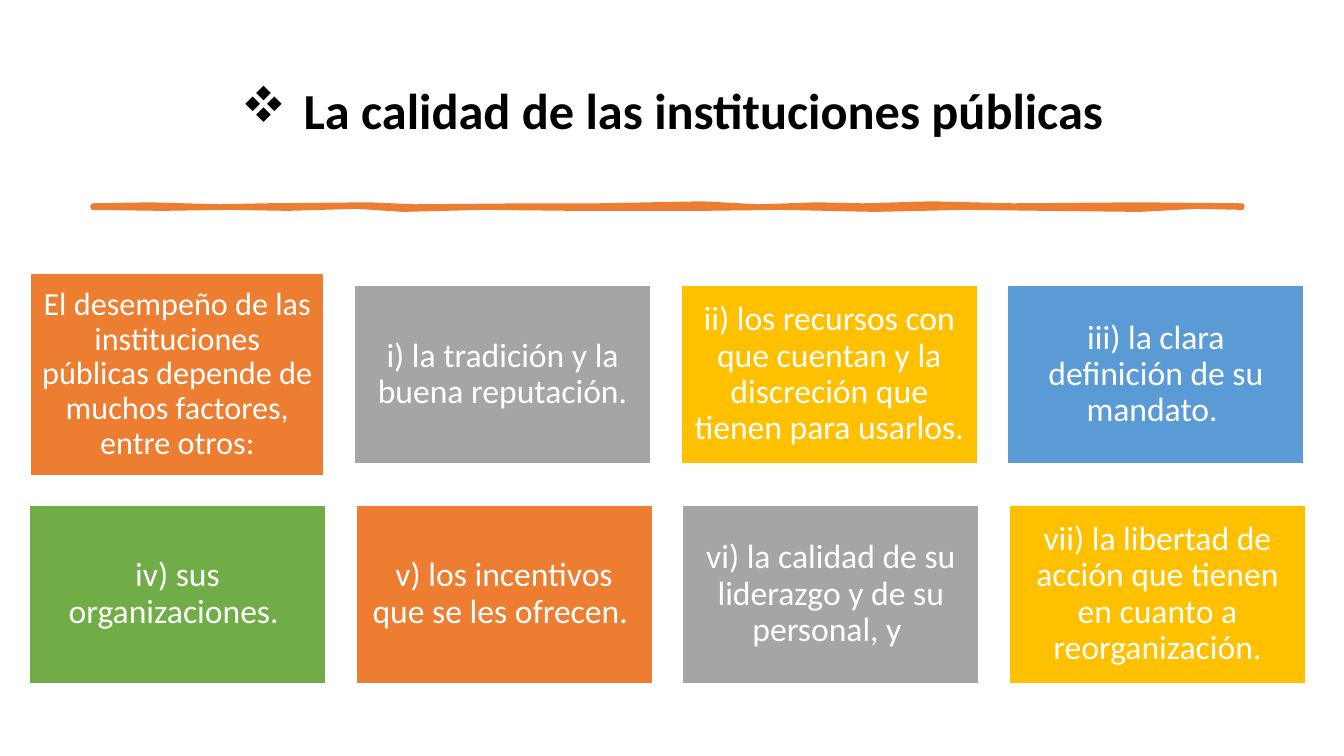
from lxml.etree import SubElement
from pptx import Presentation
from pptx.dml.color import RGBColor
from pptx.enum.shapes import MSO_SHAPE
from pptx.enum.text import MSO_ANCHOR, MSO_AUTO_SIZE, PP_ALIGN
from pptx.oxml.ns import qn
from pptx.util import Inches, Pt

FONT = "Calibri"
BLACK = RGBColor(0x00, 0x00, 0x00)
WHITE = RGBColor(0xFF, 0xFF, 0xFF)
ORANGE = RGBColor(0xED, 0x7D, 0x31)
GRAY = RGBColor(0xA5, 0xA5, 0xA5)
GOLD = RGBColor(0xFF, 0xC0, 0x00)
BLUE = RGBColor(0x5B, 0x9B, 0xD5)
GREEN = RGBColor(0x70, 0xAD, 0x47)

# Card: text, fill, width, height, font size
CARD = (2.94, 1.77, 24)
FIRST_ROW = [
    ("El desempeño de las instituciones públicas depende de muchos factores, entre otros:",
     ORANGE, 2.91, 2.01, 23),
    ("i) la tradición y la buena reputación.", GRAY, *CARD),
    ("ii) los recursos con que cuentan y la discreción que tienen para usarlos.", GOLD, *CARD),
    ("iii) la clara definición de su mandato. ", BLUE, *CARD),
]
SECOND_ROW = [
    ("iv) sus organizaciones. ", GREEN, *CARD),
    ("v) los incentivos que se les ofrecen. ", ORANGE, *CARD),
    ("vi) la calidad de su liderazgo y de su personal, y ", GRAY, *CARD),
    ("vii) la libertad de acción que tienen en cuanto a reorganización.", GOLD, *CARD),
]
GAP = 0.3

# Uneven edges of the rule: (share of its width, offset in inches)
TOP_EDGE = [(0, 0), (0.05, -0.01), (0.11, 0.01), (0.15, 0), (0.24, -0.01), (0.28, 0.01),
            (0.38, 0), (0.44, 0), (0.53, -0.02), (0.58, 0.01), (0.63, -0.01),
            (0.67, 0), (0.73, -0.02), (0.8, 0), (0.91, -0.01), (1, 0)]
BOTTOM_EDGE = [(0, 0.02), (0.06, 0.03), (0.12, 0.02), (0.17, 0.03), (0.23, 0.01),
               (0.27, 0.04), (0.34, 0.02), (0.42, 0.03), (0.53, 0.03), (0.6, 0.02),
               (0.68, 0.04), (0.76, 0.02), (0.83, 0.03), (0.91, 0.04), (0.96, 0.01), (1, 0.02)]


def add_run(p, text, size, color, bold=False):
    r = p.add_run()
    r.text = text
    r.font.name = FONT
    r.font.size = Pt(size)
    r.font.bold = bold
    r.font.color.rgb = color


def place_title(s, left, top, width, height):
    sp = s.shapes.title
    sp.left, sp.top = Inches(left), Inches(top)
    sp.width, sp.height = Inches(width), Inches(height)
    tf = sp.text_frame
    tf.auto_size = MSO_AUTO_SIZE.NONE
    tf.vertical_anchor = MSO_ANCHOR.MIDDLE
    p = tf.paragraphs[0]
    p.alignment = PP_ALIGN.CENTER
    p.line_spacing = 0.9
    add_run(p, "La calidad de las instituciones públicas", 36, BLACK, bold=True)
    # Hanging bullet: "v" is the four-diamond sign in Wingdings
    pPr = p._p.get_or_add_pPr()
    pPr.set("marL", str(Inches(0.62)))
    pPr.set("indent", str(-Inches(0.62)))
    bullet_font = SubElement(pPr, qn("a:buFont"))
    bullet_font.set("typeface", "Wingdings")
    bullet_font.set("charset", "2")
    SubElement(pPr, qn("a:buChar")).set("char", "v")


def draw_rule(s, left, top, width):
    points = [(Inches(left + x * width), Inches(top + y))
              for x, y in TOP_EDGE + BOTTOM_EDGE[::-1]]
    builder = s.shapes.build_freeform(*points[0])
    builder.add_line_segments(points[1:], close=True)
    sp = builder.convert_to_shape()
    sp.shadow.inherit = False
    sp.fill.solid()
    sp.fill.fore_color.rgb = ORANGE
    sp.line.color.rgb = ORANGE
    sp.line.width = Pt(3.25)
    # Round joins
    SubElement(sp._element.spPr.find(qn("a:ln")), qn("a:round"))


def draw_card(s, left, top, width, height, text, fill, size):
    sp = s.shapes.add_shape(MSO_SHAPE.RECTANGLE, Inches(left), Inches(top),
                            Inches(width), Inches(height))
    sp.shadow.inherit = False
    sp.fill.solid()
    sp.fill.fore_color.rgb = fill
    sp.line.color.rgb = WHITE
    sp.line.width = Pt(1)
    tf = sp.text_frame
    tf.word_wrap = True
    tf.vertical_anchor = MSO_ANCHOR.MIDDLE
    tf.margin_left = tf.margin_right = tf.margin_top = tf.margin_bottom = Inches(0.1)
    p = tf.paragraphs[0]
    p.alignment = PP_ALIGN.CENTER
    p.line_spacing = 0.9
    add_run(p, text, size, WHITE)


def draw_row(s, left, top, width, cards):
    """Centre the cards in the row, both across and down."""
    row_height = max(card[3] for card in cards)
    x = left + (width - sum(card[2] for card in cards) - GAP * (len(cards) - 1)) / 2
    for text, fill, w, h, size in cards:
        draw_card(s, x, top + (row_height - h) / 2, w, h, text, fill, size)
        x += w + GAP


def main():
    prs = Presentation()
    prs.slide_width, prs.slide_height = Inches(13.33), Inches(7.5)
    s = prs.slides.add_slide(prs.slide_layouts[5])
    place_title(s, 0.92, 0.4, 11.5, 1.45)
    draw_rule(s, 0.92, 2.04, 11.4)
    for top, cards in ((2.71, FIRST_ROW), (5.01, SECOND_ROW)):
        draw_row(s, 0.29, top, 12.66, cards)
    prs.save("out.pptx")


if __name__ == "__main__":
    main()
